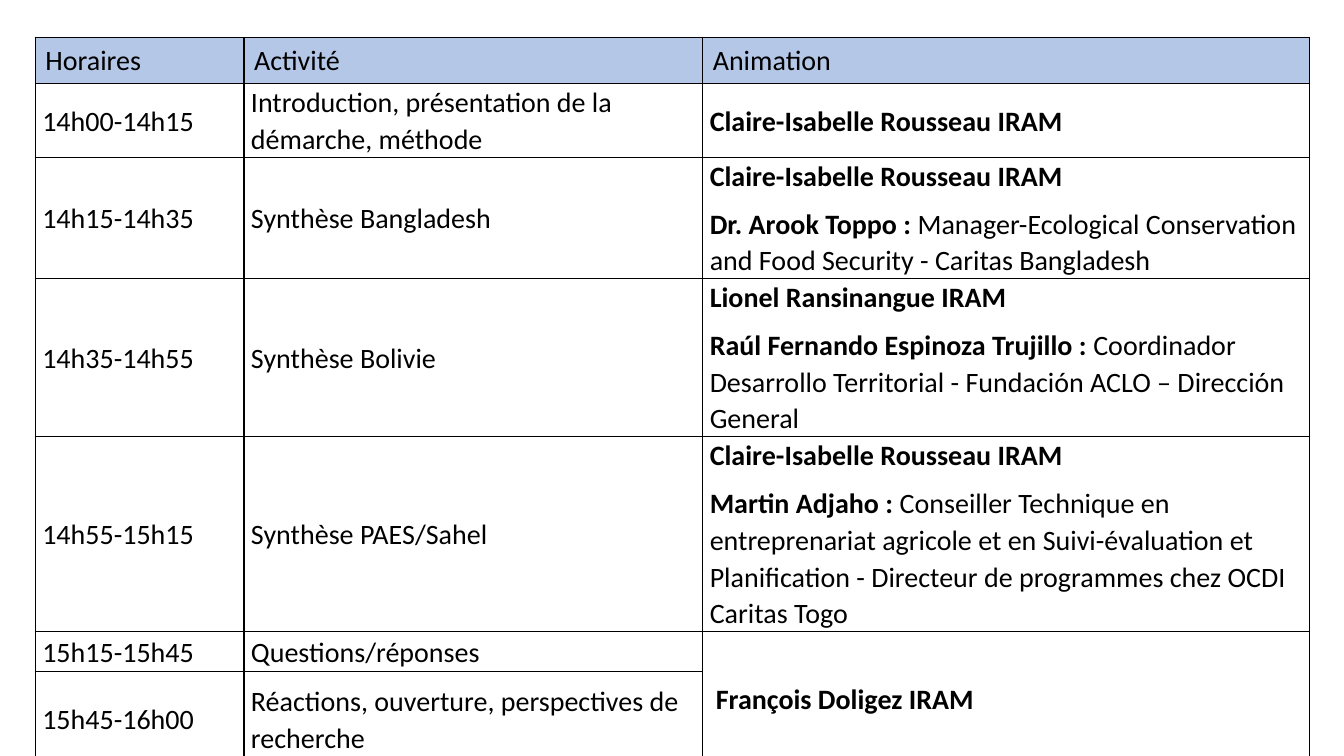
from lxml.etree import SubElement
from pptx import Presentation
from pptx.dml.color import RGBColor
from pptx.enum.text import MSO_ANCHOR as Anchor
from pptx.oxml.ns import qn
from pptx.util import Inches, Pt

BLACK = RGBColor(0x00, 0x00, 0x00)
WHITE = RGBColor(0xFF, 0xFF, 0xFF)
BLUE = RGBColor(0xB4, 0xC7, 0xE7)

HEAD = ("Horaires", "Activité", "Animation")
CLAIRE = ("Claire-Isabelle Rousseau IRAM", "")
SESSIONS = [
    ("14h00-14h15", "Introduction, présentation de la démarche, méthode", [CLAIRE]),
    ("14h15-14h35", "Synthèse Bangladesh", [
        CLAIRE,
        ("Dr. Arook Toppo : ",
         "Manager-Ecological Conservation and Food Security - Caritas Bangladesh")]),
    ("14h35-14h55", "Synthèse Bolivie", [
        ("Lionel Ransinangue IRAM", ""),
        ("Raúl Fernando Espinoza Trujillo : ",
         "Coordinador Desarrollo Territorial - Fundación ACLO – Dirección General")]),
    ("14h55-15h15", "Synthèse PAES/Sahel", [
        CLAIRE,
        ("Martin Adjaho : ",
         "Conseiller Technique en entreprenariat agricole et en Suivi-évaluation et "
         "Planification - Directeur de programmes chez OCDI Caritas Togo")]),
    ("15h15-15h45", "Questions/réponses", [("François Doligez IRAM", "")]),
    ("15h45-16h00", "Réactions, ouverture, perspectives de recherche", []),
]
WIDTHS = (2.07, 4.55, 6.02)
HEIGHTS = (0.46, 0.73, 1.2, 1.57, 1.93, 0.4, 0.94)
LEFT, TOP = 0.35, 0.37


def add_run(para, text, bold):
    run = para.add_run()
    run.text = text
    run.font.name = "Calibri"
    run.font.size = Pt(20)
    run.font.bold = bold
    run.font.color.rgb = BLACK


def frame(cell, color):
    props = cell._tc.get_or_add_tcPr()
    for side in ("a:lnL", "a:lnR", "a:lnT", "a:lnB"):
        line = SubElement(props, qn(side), w=str(Pt(1)))
        SubElement(SubElement(line, qn("a:solidFill")), qn("a:srgbClr"), val=str(BLACK))
    cell.fill.solid()
    cell.fill.fore_color.rgb = color
    cell.vertical_anchor = Anchor.MIDDLE


def write_body(cell, people):
    cell.margin_left = cell.margin_right = Inches(0.07)
    cell.margin_top = cell.margin_bottom = 0
    for i, (name, role) in enumerate(people):
        para = cell.text_frame.add_paragraph() if i else cell.text_frame.paragraphs[0]
        para.line_spacing = 1.07
        para.space_after = Pt(8)
        for text, bold in ((name, True), (role, False)):
            if text:
                add_run(para, text, bold)


def main():
    deck = Presentation()
    deck.slide_width, deck.slide_height = Inches(13.33), Inches(7.5)
    slide = deck.slides.add_slide(deck.slide_layouts[6])
    table = slide.shapes.add_table(
        len(HEIGHTS), len(WIDTHS), Inches(LEFT), Inches(TOP),
        Inches(sum(WIDTHS)), Inches(sum(HEIGHTS))).table
    table.first_row = table.horz_banding = False
    for col, width in zip(table.columns, WIDTHS):
        col.width = Inches(width)
    for row, height in zip(table.rows, HEIGHTS):
        row.height = Inches(height)

    for c, title in enumerate(HEAD):
        cell = table.cell(0, c)
        frame(cell, BLUE)
        add_run(cell.text_frame.paragraphs[0], title, False)
    for r, (time, topic, people) in enumerate(SESSIONS, 1):
        for c, lines in enumerate(([("", time)], [("", topic)], people)):
            cell = table.cell(r, c)
            frame(cell, WHITE)
            write_body(cell, lines)

    last = len(SESSIONS)
    shared = table.cell(last - 1, 2)
    shared.merge(table.cell(last, 2))
    shared.margin_left = Inches(0.13)
    deck.save("out.pptx")


if __name__ == "__main__":
    main()
